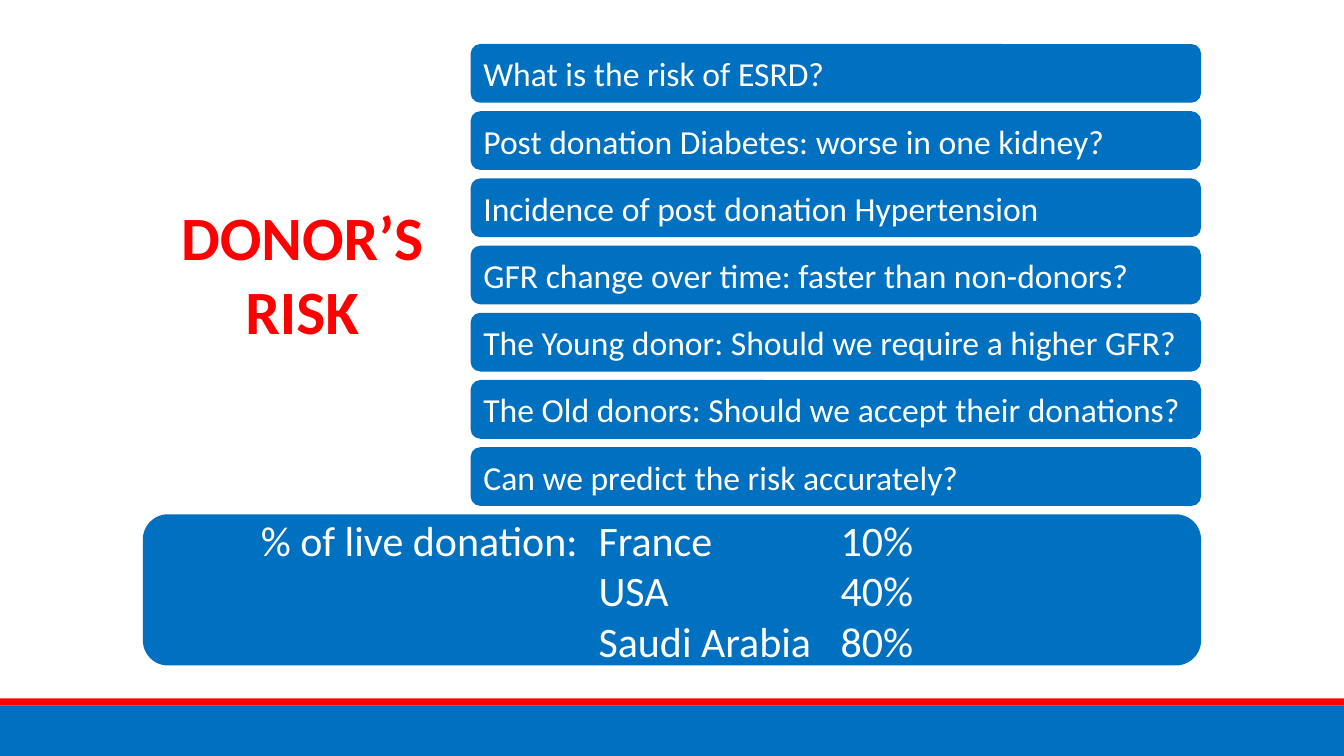
import pptx
import pptx.util
import pptx.dml.color
import pptx.enum.shapes
import pptx.enum.text
import lxml.etree
import pptx.oxml.ns

Cm = pptx.util.Cm
SHAPE = pptx.enum.shapes.MSO_SHAPE
ALIGN = pptx.enum.text.PP_ALIGN
ANCHOR = pptx.enum.text.MSO_ANCHOR

COLORS = {"blue": "0070C0", "red": "FF0000", "white": "FFFFFF"}
FONT = "Calibri"

TOPICS = [
    "What is the risk of ESRD?",
    "Post donation Diabetes: worse in one kidney?",
    "Incidence of post donation Hypertension",
    "GFR change over time: faster than non-donors?",
    "The Young donor: Should we require a higher GFR?",
    "The Old donors: Should we accept their donations?",
    "Can we predict the risk accurately?",
]
RATES = [
    ("% of live donation:", "France", "10%"),
    ("", "USA", "40%"),
    ("", "Saudi Arabia", "80%"),
]


def color(name):
    return pptx.dml.color.RGBColor.from_string(COLORS[name])


def write(frame, lines, size=24, ink="white", bold=False,
          align=ALIGN.LEFT, anchor=ANCHOR.MIDDLE, tabs=()):
    """Fill a text frame, one paragraph per line; tabs are in cm."""
    frame.word_wrap = True
    frame.vertical_anchor = anchor
    for i, line in enumerate(lines):
        para = frame.paragraphs[0] if i == 0 else frame.add_paragraph()
        para.alignment = align
        run = para.add_run()
        run.text = line
        font = run.font
        font.name, font.size, font.bold = FONT, pptx.util.Pt(size), bold
        font.color.rgb = color(ink)
        if tabs:
            qn = pptx.oxml.ns.qn
            stops = lxml.etree.SubElement(para._p.get_or_add_pPr(), qn("a:tabLst"))
            for stop in tabs:
                lxml.etree.SubElement(stops, qn("a:tab"), pos=str(Cm(stop)), algn="l")


def block(slide, kind, left, top, width, height, fill):
    """Add a flat filled shape; lengths are in cm."""
    shape = slide.shapes.add_shape(kind, Cm(left), Cm(top), Cm(width), Cm(height))
    shape.shadow.inherit = False
    shape.fill.solid()
    shape.fill.fore_color.rgb = color(fill)
    shape.line.fill.background()
    return shape


def footer(slide, left, top, width, height):
    stripe = 0.18
    block(slide, SHAPE.RECTANGLE, left, top + stripe, width, height - stripe, "blue")
    block(slide, SHAPE.RECTANGLE, left, top, width, stripe, "red")


def heading(slide, left, top, width, height):
    title = slide.shapes.title
    title.left, title.top = Cm(left), Cm(top)
    title.width, title.height = Cm(width), Cm(height)
    write(title.text_frame, ["DONOR’S RISK"], size=44, ink="red", bold=True,
          align=ALIGN.CENTER, anchor=ANCHOR.TOP)


def topics(slide, left, top, width, height):
    bar = 1.48
    step = (height - bar) / (len(TOPICS) - 1)
    for i, topic in enumerate(TOPICS):
        shape = block(slide, SHAPE.ROUNDED_RECTANGLE,
                      left, top + i * step, width, bar, "blue")
        write(shape.text_frame, [topic])


def rates(slide, left, top, width, height):
    panel = block(slide, SHAPE.ROUNDED_RECTANGLE, left, top, width, height, "blue")
    lines = ["\t" + "\t".join(row) for row in RATES]
    write(panel.text_frame, lines, size=30, tabs=(2.54, 11.05, 17.15))


def main():
    deck = pptx.Presentation()
    deck.slide_width, deck.slide_height = Cm(33.87), Cm(19.05)
    slide = deck.slides.add_slide(deck.slide_layouts[5])  # Title Only

    footer(slide, 0, 17.6, 33.87, 1.45)
    heading(slide, 3.39, 4.88, 8.46, 4.01)
    topics(slide, 11.86, 1.11, 18.41, 11.64)
    rates(slide, 3.6, 12.96, 26.67, 3.81)

    deck.save("out.pptx")


if __name__ == "__main__":
    main()
